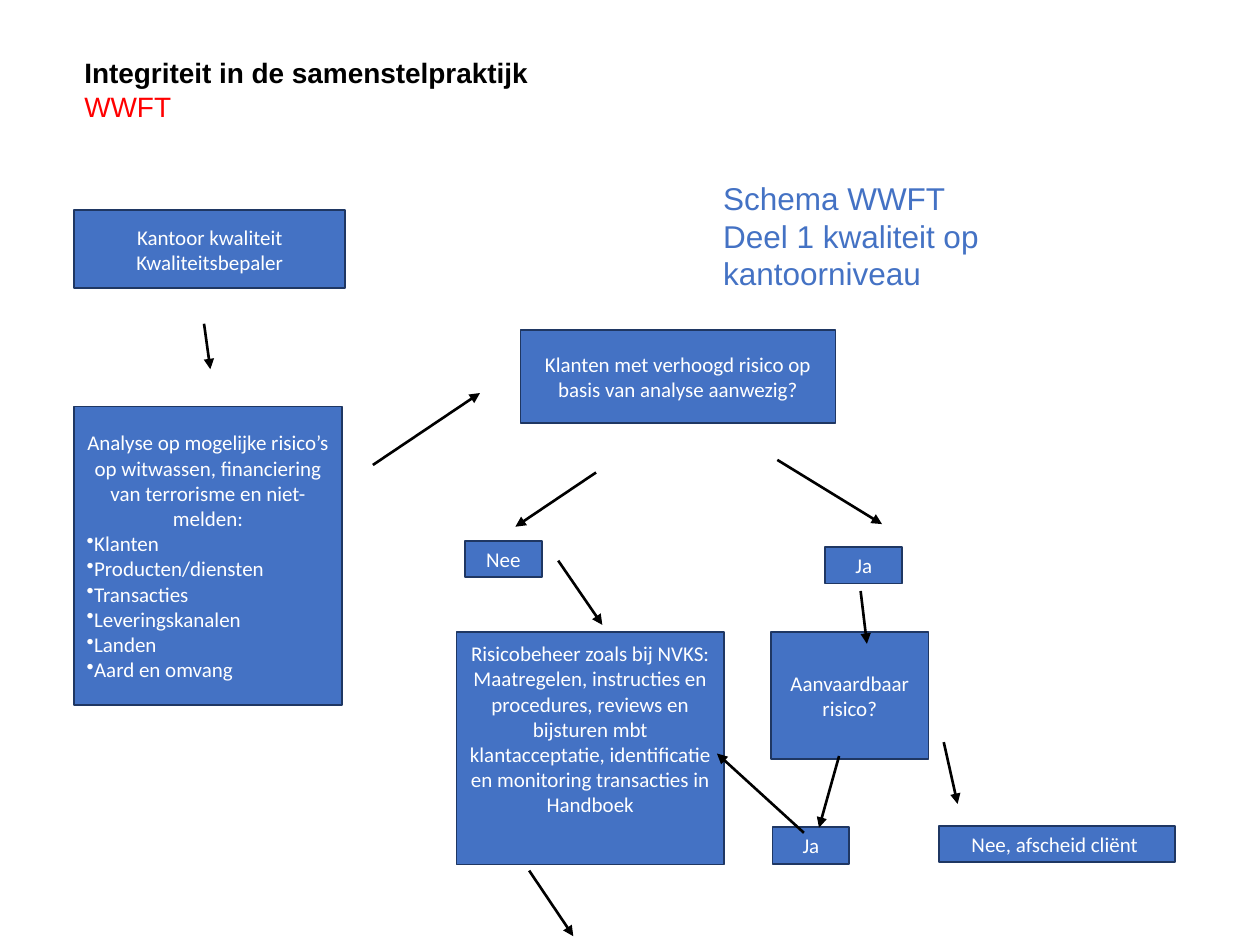
from lxml.etree import SubElement
from pptx import Presentation
from pptx.dml.color import RGBColor
from pptx.enum.shapes import MSO_CONNECTOR, MSO_SHAPE
from pptx.enum.text import MSO_ANCHOR, MSO_AUTO_SIZE, PP_ALIGN
from pptx.oxml.ns import qn
from pptx.util import Pt

COLOURS = {
    "blue": "4472C4",
    "navy": "1F3763",
    "white": "FFFFFF",
    "black": "000000",
    "red": "FF0000",
}

# Headings: text, colour, bold
TITLE = [
    ("Integriteit in de samenstelpraktijk", "black", True),
    ("WWFT", "red", False),
]
SUBJECT = [
    ("Schema WWFT", "blue", False),
    ("Deel 1 kwaliteit op kantoorniveau", "blue", False),
]

# Flow boxes: left, top, width, height, centred lines
ANSWER = (43.9, 20.9)
BOXES = [
    (42.5, 120.2, 154.8, 44.6, ["Kantoor kwaliteit", "Kwaliteitsbepaler"]),
    (297.4, 188.6, 180, 53.3,
     ["Klanten met verhoogd risico op basis van analyse aanwezig?"]),
    (265.7, 309, *ANSWER, ["Nee"]),
    (471.6, 312.5, *ANSWER, ["Ja"]),
    (440.6, 361, 90, 72.7, ["Aanvaardbaar risico?"]),
    (536.8, 471.9, 134.6, 20.9, ["Nee, afscheid cliënt "]),
    (441.4, 472.7, *ANSWER, ["Ja"]),
]
ANALYSIS = (42.5, 232.3, 152.8, 170.8, [
    "Analyse op mogelijke risico’s op witwassen, financiering van "
    "terrorisme en niet-melden:"])
RISKS = ["Klanten", "Producten/diensten", "Transacties",
         "Leveringskanalen", "Landen", "Aard en omvang"]
CONTROL = (260.9, 361.2, 152.8, 132.8, [
    "Risicobeheer zoals bij NVKS: Maatregelen, instructies en procedures, "
    "reviews en bijsturen mbt klantacceptatie, identificatie en monitoring "
    "transacties in Handboek"])

# Arrows: start x, start y, end x, end y
ARROWS = [
    (213.1, 265.7, 274.3, 224.6),
    (116.6, 185, 120.2, 211),
    (319, 320.4, 344.2, 357.1),
    (491.8, 337.7, 495.4, 367.9),
    (340.6, 270, 294.5, 301),
    (444.2, 262.8, 504, 299.5),
    (539.3, 424.1, 547.2, 459.4),
    (459.4, 475.9, 409.7, 430.6),
    (479.5, 432, 468, 473),
    (302.4, 497.5, 327.6, 535),
]


def colour(name):
    return RGBColor.from_string(COLOURS[name])


def style(para, font, size, ink, bold=False, align=PP_ALIGN.LEFT):
    para.alignment = align
    para.font.name = font
    para.font.size = Pt(size)
    para.font.bold = bold
    para.font.color.rgb = colour(ink)


def add_paragraph(frame, text):
    para = frame.paragraphs[0]
    if para.runs:
        para = frame.add_paragraph()
    para.add_run().text = text
    return para


def fill_heading(shape, place, lines, size):
    shape.left, shape.top, shape.width, shape.height = map(Pt, place)
    frame = shape.text_frame
    frame.word_wrap = True
    frame.auto_size = MSO_AUTO_SIZE.NONE
    frame.vertical_anchor = MSO_ANCHOR.TOP
    for text, ink, bold in lines:
        style(add_paragraph(frame, text), "Arial", size, ink, bold)


def add_box(page, left, top, width, height, lines):
    box = page.shapes.add_shape(
        MSO_SHAPE.RECTANGLE, Pt(left), Pt(top), Pt(width), Pt(height))
    box.shadow.inherit = False
    box.fill.solid()
    box.fill.fore_color.rgb = colour("blue")
    box.line.color.rgb = colour("navy")
    box.line.width = Pt(1)
    frame = box.text_frame
    frame.word_wrap = True
    frame.vertical_anchor = MSO_ANCHOR.MIDDLE
    for text in lines:
        style(add_paragraph(frame, text), "Calibri", 12, "white",
              align=PP_ALIGN.CENTER)
    return frame


def add_bullet(frame, text):
    para = add_paragraph(frame, text)
    SubElement(para._p.get_or_add_pPr(), qn("a:buChar"), char="•")
    style(para, "Calibri", 12, "white")


def add_arrow(page, *ends):
    arrow = page.shapes.add_connector(MSO_CONNECTOR.STRAIGHT, *map(Pt, ends))
    arrow.line.color.rgb = colour("black")
    arrow.line.width = Pt(1.5)
    SubElement(arrow.line._get_or_add_ln(), qn("a:tailEnd"), type="triangle")
    SubElement(arrow._element.spPr, qn("a:effectLst"))


def main():
    deck = Presentation()
    deck.slide_width, deck.slide_height = Pt(720), Pt(540)
    page = deck.slides.add_slide(deck.slide_layouts[5])

    # Headings
    fill_heading(page.shapes.title, (41, 28.1, 622.8, 46.1), TITLE, 16)
    subject = page.shapes.add_textbox(0, 0, 0, 0)
    fill_heading(subject, (406.1, 98.6, 265.7, 51.1), SUBJECT, 18)

    # Flow boxes
    for box in BOXES:
        add_box(page, *box)
    analysis = add_box(page, *ANALYSIS)
    for risk in RISKS:
        add_bullet(analysis, risk)
    control = add_box(page, *CONTROL)
    control.margin_bottom = Pt(25.6)

    # Arrows
    for ends in ARROWS:
        add_arrow(page, *ends)

    deck.save("out.pptx")


if __name__ == "__main__":
    main()
